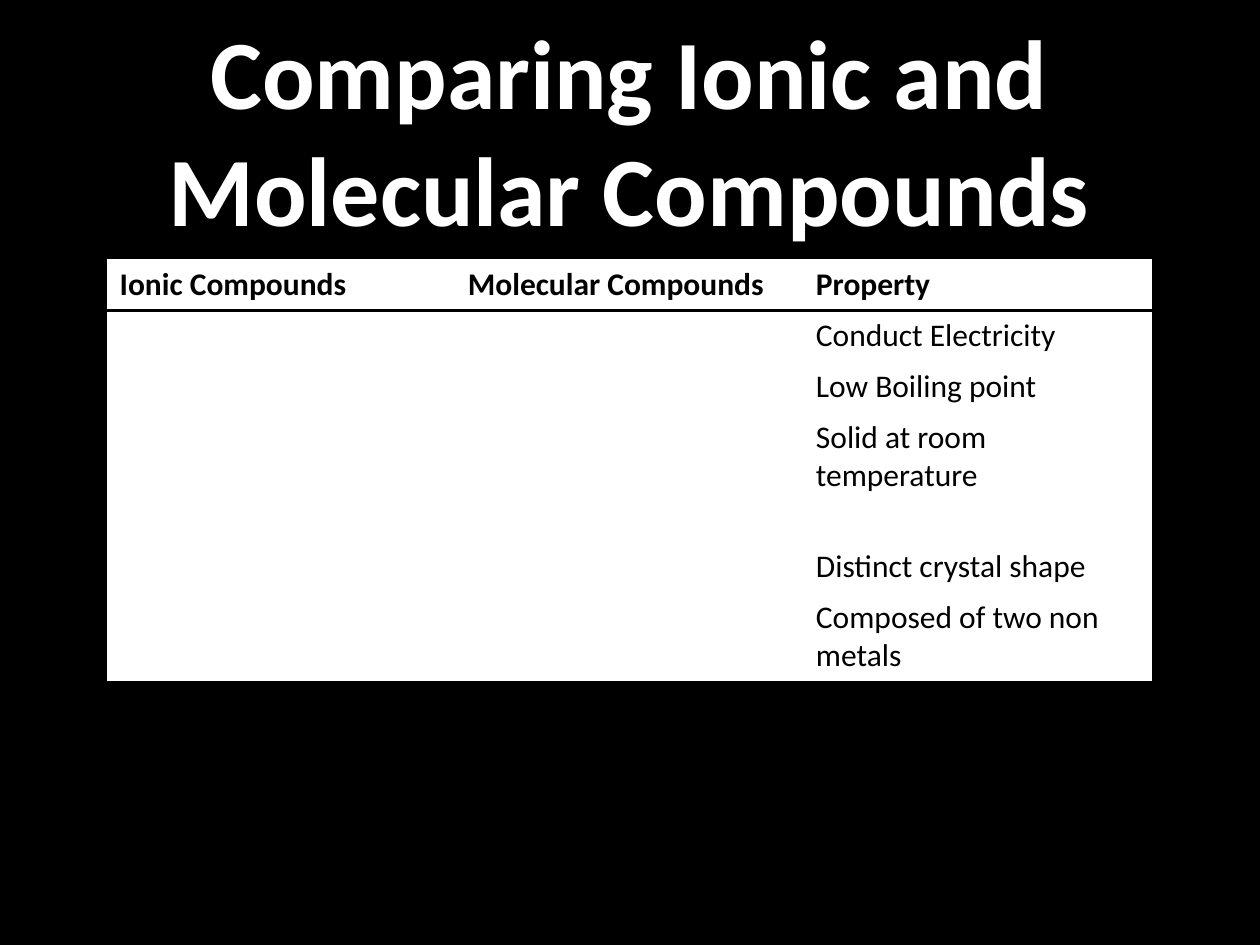
"""Build a slide that compares ionic and molecular compounds in a table."""
from dataclasses import dataclass

from lxml.etree import SubElement
from pptx import Presentation
from pptx.dml.color import RGBColor
from pptx.enum.text import MSO_ANCHOR, MSO_AUTO_SIZE, PP_ALIGN
from pptx.oxml.ns import qn
from pptx.util import Inches, Pt

HUES = {"ink": "000000", "paper": "FFFFFF"}
WIDE, HIGH = Inches(10), Inches(7.5)
PLAIN = "{2D5ABB26-0587-4C30-8999-92F81FD0307C}"
LEFT, SPAN = 0.085, 0.829


@dataclass
class Row:
    cells: tuple[str, ...]
    high: float = 0.054
    bold: bool = False
    rule: float = 0


ROWS = (
    Row(("Ionic Compounds", "Molecular Compounds", "Property"), bold=True, rule=2),
    Row(("", "", "Conduct Electricity")),
    Row(("", "", "Low Boiling point")),
    Row(("", "", "Solid at room temperature"), high=0.136),
    Row(("", "", "Distinct crystal shape")),
    Row(("", "", "Composed of two non metals"), high=0.094),
)


def tint(name: str) -> RGBColor:
    return RGBColor.from_string(HUES[name])


def write(frame, text: str, *, size=18, hue="ink", bold=False, align=PP_ALIGN.LEFT) -> None:
    para = frame.paragraphs[0]
    para.alignment = align
    font = para.font
    if text:
        run = para.add_run()
        run.text = text
        font = run.font
    font.name, font.size, font.bold = "Calibri", Pt(size), bold
    font.color.rgb = tint(hue)


def rule(cell, size: float) -> None:
    props = cell._tc.get_or_add_tcPr()
    line = SubElement(props, qn("a:lnB"), w=str(Pt(size)))
    fill = SubElement(line, qn("a:solidFill"))
    SubElement(fill, qn("a:srgbClr"), val=HUES["ink"])
    props.insert(0, line)


def head(slide, text: str) -> None:
    title = slide.shapes.title
    title.left, title.top = int(WIDE * LEFT), int(HIGH * 0.016)
    title.width, title.height = int(WIDE * SPAN), int(HIGH * 0.241)
    frame = title.text_frame
    frame.word_wrap = True
    frame.auto_size = MSO_AUTO_SIZE.NONE
    frame.vertical_anchor = MSO_ANCHOR.MIDDLE
    write(frame, text, size=56, hue="paper", bold=True, align=PP_ALIGN.CENTER)


def grid(slide, rows: tuple[Row, ...]) -> None:
    high = int(HIGH * sum(row.high for row in rows))
    table = slide.shapes.add_table(
        len(rows), len(rows[0].cells),
        int(WIDE * LEFT), int(HIGH * 0.274), int(WIDE * SPAN), high,
    ).table
    table.first_row = table.horz_banding = False
    table._tbl.tblPr.find(qn("a:tableStyleId")).text = PLAIN
    for r, row in enumerate(rows):
        table.rows[r].height = int(HIGH * row.high)
        for c, text in enumerate(row.cells):
            cell = table.cell(r, c)
            cell.fill.solid()
            cell.fill.fore_color.rgb = tint("paper")
            write(cell.text_frame, text, bold=row.bold)
            if row.rule:
                rule(cell, row.rule)


def main() -> None:
    deck = Presentation()
    deck.slide_width, deck.slide_height = WIDE, HIGH
    slide = deck.slides.add_slide(deck.slide_layouts[5])
    back = slide.background.fill
    back.solid()
    back.fore_color.rgb = tint("ink")
    head(slide, "Comparing Ionic and Molecular Compounds")
    grid(slide, ROWS)
    deck.save("out.pptx")


if __name__ == "__main__":
    main()
